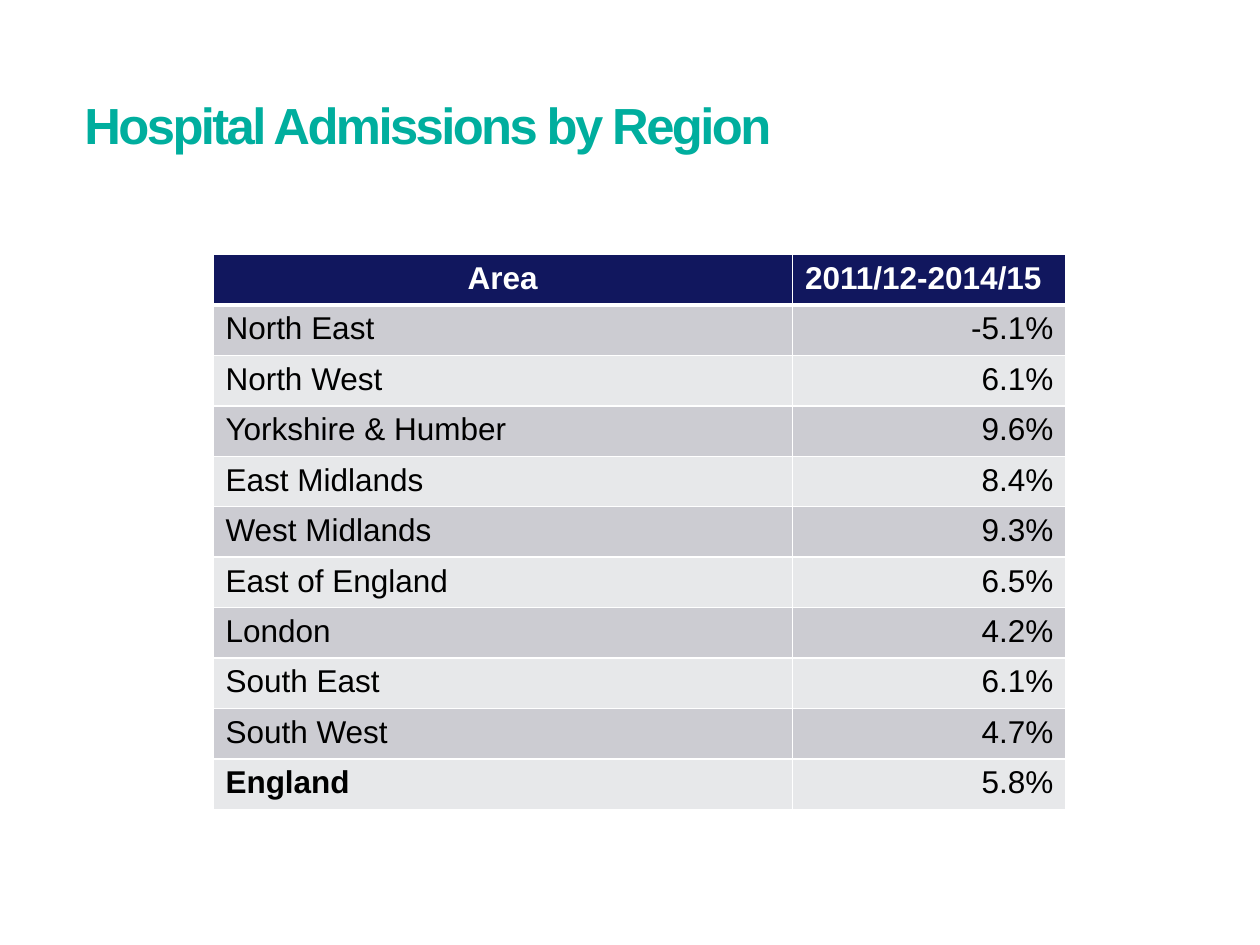
from dataclasses import dataclass

from lxml.etree import SubElement
from pptx import Presentation
from pptx.dml.color import RGBColor
from pptx.enum.text import MSO_ANCHOR, PP_ALIGN as Align
from pptx.oxml.ns import qn
from pptx.util import Inches, Pt


@dataclass(frozen=True)
class Theme:
    font: str = "Arial"
    title_size: float = 29
    title_tracking: float = -1.5
    table_size: float = 18
    title: str = "00AE9E"
    header: str = "11175E"
    header_text: str = "FFFFFF"
    body_text: str = "000000"
    bands: tuple = ("CCCCD2", "E7E8EA")
    rule: str = "FFFFFF"
    rule_width: float = 1
    header_rule_width: float = 3


HEADINGS = ("Area", "2011/12-2014/15")
ADMISSIONS = (
    ("North East", "-5.1%"),
    ("North West", "6.1%"),
    ("Yorkshire & Humber", "9.6%"),
    ("East Midlands", "8.4%"),
    ("West Midlands", "9.3%"),
    ("East of England", "6.5%"),
    ("London", "4.2%"),
    ("South East", "6.1%"),
    ("South West", "4.7%"),
    ("England", "5.8%"),
)
TOTAL_AREA = "England"


class SlideBuilder:
    """Draws on one slide; lengths are percentages of its width or height."""

    def __init__(self, deck, theme):
        self.deck, self.theme = deck, theme
        self.slide = deck.slides.add_slide(deck.slide_layouts[6])

    def across(self, percent):
        return round(self.deck.slide_width * percent / 100)

    def down(self, percent):
        return round(self.deck.slide_height * percent / 100)

    def add_words(self, frame, words, size, color, bold=False, align=Align.LEFT):
        paragraph = frame.paragraphs[0]
        paragraph.alignment = align
        run = paragraph.add_run()
        run.text = words
        font_format = {"name": self.theme.font, "size": Pt(size), "bold": bold}
        for attribute, value in font_format.items():
            setattr(run.font, attribute, value)
        run.font.color.rgb = RGBColor.from_string(color)
        return run

    def title(self, words, left, top, width, height):
        theme = self.theme
        frame = self.slide.shapes.add_textbox(
            self.across(left), self.down(top), self.across(width), self.down(height)
        ).text_frame
        frame_format = {
            "word_wrap": True, "vertical_anchor": MSO_ANCHOR.TOP,
            "margin_left": 0, "margin_top": 0, "margin_right": 0, "margin_bottom": 0,
        }
        for attribute, value in frame_format.items():
            setattr(frame, attribute, value)
        heading = self.add_words(frame, words, theme.title_size, theme.title, bold=True)
        heading._r.get_or_add_rPr().set("spc", str(round(theme.title_tracking * 100)))
        frame.paragraphs[0].line_spacing = 1.1

    def rule(self, cell, side, width):
        line = SubElement(cell._tc.get_or_add_tcPr(), qn(f"a:ln{side}"), w=str(Pt(width)))
        SubElement(SubElement(line, qn("a:solidFill")), qn("a:srgbClr"), val=self.theme.rule)

    def cell(self, cell, words, fill, color, bold, align, top_rule, bottom_rule):
        theme = self.theme
        widths = {"L": theme.rule_width, "R": theme.rule_width,
                  "T": top_rule, "B": bottom_rule}
        for side, width in widths.items():
            self.rule(cell, side, width)
        cell.fill.solid()
        cell.fill.fore_color.rgb = RGBColor.from_string(fill)
        self.add_words(cell.text_frame, words, theme.table_size, color, bold, align)

    def table(self, headings, records, left, top, column_widths, row_height):
        theme = self.theme
        rows = (headings, *records)
        table = self.slide.shapes.add_table(
            len(rows), len(headings), self.across(left), self.down(top),
            self.across(sum(column_widths)), self.down(row_height * len(rows)),
        ).table
        table.horz_banding = False
        for column, width in zip(table.columns, column_widths):
            column.width = self.across(width)
        for row_index, record in enumerate(rows):
            table.rows[row_index].height = self.down(row_height)
            is_header = row_index == 0
            fill = theme.header if is_header else theme.bands[(row_index - 1) % 2]
            color = theme.header_text if is_header else theme.body_text
            alignments = (Align.CENTER, Align.LEFT) if is_header else (Align.LEFT, Align.RIGHT)
            top_rule = theme.header_rule_width if row_index == 1 else theme.rule_width
            bottom_rule = theme.header_rule_width if is_header else theme.rule_width
            for column_index, words in enumerate(record):
                self.cell(
                    table.cell(row_index, column_index), words, fill, color,
                    is_header or words == TOTAL_AREA, alignments[column_index],
                    top_rule, bottom_rule,
                )


def main():
    deck = Presentation()
    deck.slide_width, deck.slide_height = Inches(10), Inches(7.5)
    builder = SlideBuilder(deck, Theme())
    builder.title("Hospital Admissions by Region", left=6.7, top=9.33, width=89.2, height=16.67)
    builder.table(HEADINGS, ADMISSIONS, left=16.9, top=26.93,
                  column_widths=(46, 21.7), row_height=5.33)
    deck.save("out.pptx")


if __name__ == "__main__":
    main()
